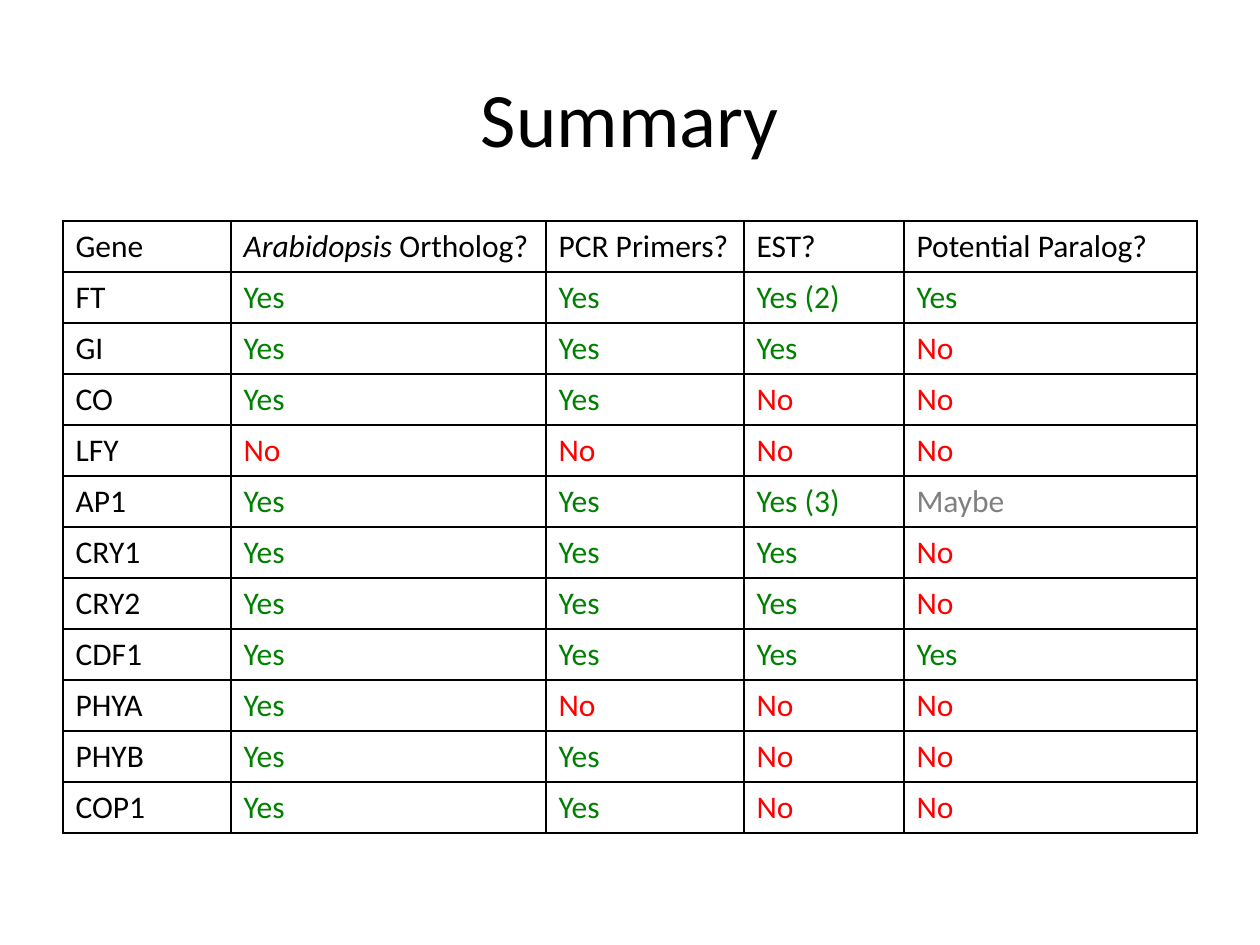
from lxml.etree import SubElement
from pptx import Presentation
from pptx.dml.color import RGBColor
from pptx.enum.text import MSO_ANCHOR, PP_ALIGN
from pptx.oxml.ns import qn
from pptx.util import Emu, Pt

EMU_PER_PX = 914400 / 126

BLACK = RGBColor(0x00, 0x00, 0x00)
GREEN = RGBColor(0x00, 0x80, 0x00)
RED = RGBColor(0xFF, 0x00, 0x00)
GRAY = RGBColor(0x80, 0x80, 0x80)
ANSWER_COLORS = {"Yes": GREEN, "No": RED, "Maybe": GRAY}

COLUMN_WIDTHS = [168, 315, 198, 160, 293]
ROW_HEIGHT = 51
HEADER = ["Gene", "Arabidopsis Ortholog?", "PCR Primers?", "EST?", "Potential Paralog?"]
GENES = [
    ["FT", "Yes", "Yes", "Yes (2)", "Yes"],
    ["GI", "Yes", "Yes", "Yes", "No"],
    ["CO", "Yes", "Yes", "No", "No"],
    ["LFY", "No", "No", "No", "No"],
    ["AP1", "Yes", "Yes", "Yes (3)", "Maybe"],
    ["CRY1", "Yes", "Yes", "Yes", "No"],
    ["CRY2", "Yes", "Yes", "Yes", "No"],
    ["CDF1", "Yes", "Yes", "Yes", "Yes"],
    ["PHYA", "Yes", "No", "No", "No"],
    ["PHYB", "Yes", "Yes", "No", "No"],
    ["COP1", "Yes", "Yes", "No", "No"],
]


def px(length):
    return Emu(round(length * EMU_PER_PX))


def set_attributes(target, values):
    for name, value in values.items():
        setattr(target, name, value)


class SlideBuilder:
    font_name = "Calibri"
    border_width = Pt(1)

    def __init__(self, slide):
        self.slide = slide

    def add_run(self, paragraph, text, size, color=BLACK, italic=False):
        run = paragraph.add_run()
        run.text = text
        values = {"name": self.font_name, "size": Pt(size), "italic": italic}
        set_attributes(run.font, values)
        run.font.color.rgb = color

    def add_title(self, text, left, top, width, height):
        shape = self.slide.shapes.add_textbox(px(left), px(top), px(width), px(height))
        values = {"word_wrap": True, "vertical_anchor": MSO_ANCHOR.MIDDLE}
        set_attributes(shape.text_frame, values)
        paragraph = shape.text_frame.paragraphs[0]
        paragraph.alignment = PP_ALIGN.CENTER
        self.add_run(paragraph, text, 44)

    def add_borders(self, cell):
        properties = cell._tc.get_or_add_tcPr()
        for side in ("lnL", "lnR", "lnT", "lnB"):
            line = SubElement(properties, qn(f"a:{side}"), w=str(self.border_width))
            fill = SubElement(line, qn("a:solidFill"))
            SubElement(fill, qn("a:srgbClr"), val=str(BLACK))

    def fill_cell(self, cell, text):
        self.add_borders(cell)
        cell.fill.background()
        paragraph = cell.text_frame.paragraphs[0]
        species = "Arabidopsis "
        if text.startswith(species):
            self.add_run(paragraph, species, 18, italic=True)
            text = text.removeprefix(species)
        color = ANSWER_COLORS.get(text.split()[0], BLACK)
        self.add_run(paragraph, text, 18, color)

    def add_table(self, rows, left, top, column_widths, row_height):
        table = self.slide.shapes.add_table(
            len(rows), len(column_widths), px(left), px(top),
            px(sum(column_widths)), px(row_height * len(rows)),
        ).table
        set_attributes(table, {"first_row": False, "horz_banding": False})
        for column, width in zip(table.columns, column_widths):
            column.width = px(width)
        for table_row, texts in zip(table.rows, rows):
            table_row.height = px(row_height)
            for cell, text in zip(table_row.cells, texts):
                self.fill_cell(cell, text)


def main():
    presentation = Presentation()
    set_attributes(presentation, {"slide_width": px(1260), "slide_height": px(945)})
    builder = SlideBuilder(presentation.slides.add_slide(presentation.slide_layouts[6]))

    # Title
    builder.add_title("Summary", 63, 38, 1134, 158)

    # Gene table
    builder.add_table([HEADER] + GENES, 63, 221, COLUMN_WIDTHS, ROW_HEIGHT)

    presentation.save("out.pptx")


if __name__ == "__main__":
    main()
